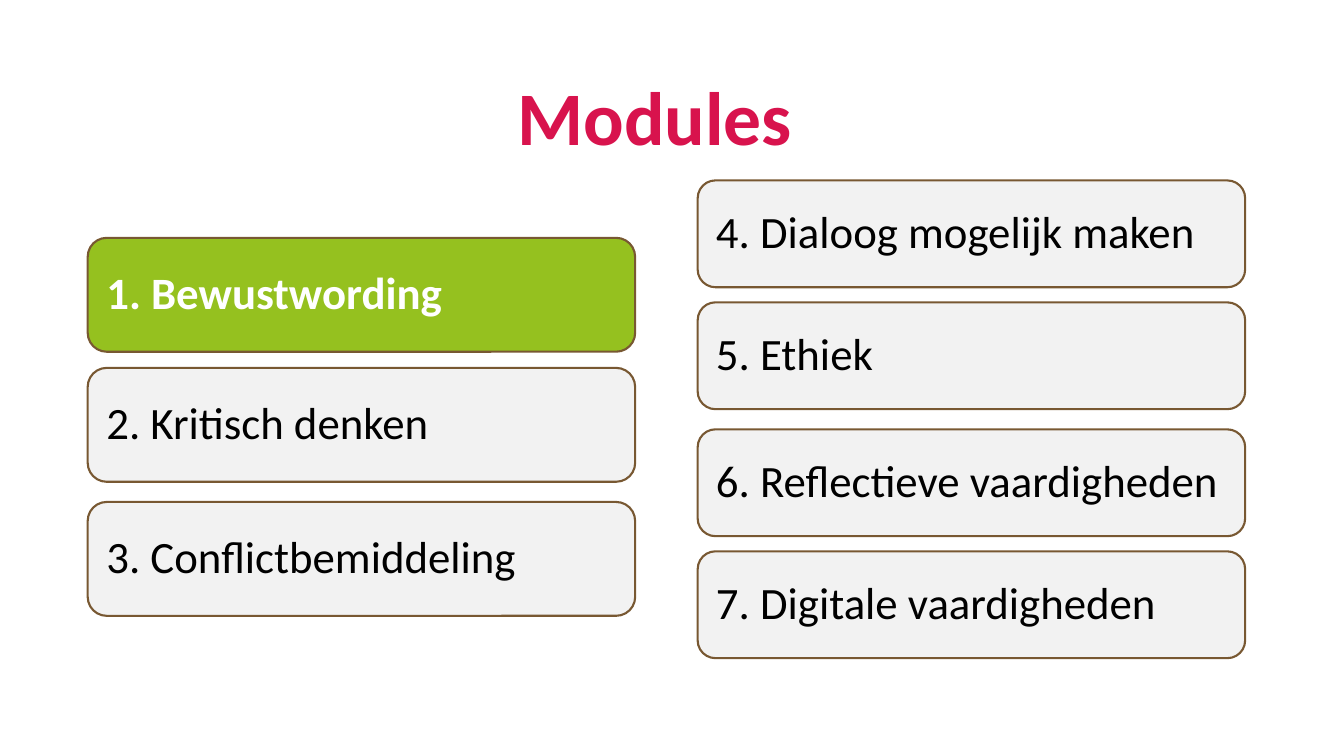
from pptx import Presentation
from pptx.dml.color import RGBColor
from pptx.enum.shapes import MSO_SHAPE
from pptx.enum.text import MSO_ANCHOR, PP_ALIGN
from pptx.util import Inches, Pt

RED = RGBColor(0xD8, 0x13, 0x4D)
GREEN = RGBColor(0x95, 0xC1, 0x1F)
GRAY = RGBColor(0xF2, 0xF2, 0xF2)
BROWN = RGBColor(0x78, 0x58, 0x32)
WHITE = RGBColor(0xFF, 0xFF, 0xFF)
BLACK = RGBColor(0, 0, 0)


def write(shape, text, size=32, color=BLACK, bold=False,
          align=PP_ALIGN.LEFT, anchor=MSO_ANCHOR.MIDDLE):
    frame = shape.text_frame
    frame.word_wrap = True
    frame.vertical_anchor = anchor
    par = frame.paragraphs[0]
    par.text = text
    par.alignment = align
    par.line_spacing = 0.9
    font = par.font
    font.name = "Calibri"
    font.size = Pt(size)
    font.bold = bold
    font.color.rgb = color


deck = Presentation()
deck.slide_width = Inches(13.33)
deck.slide_height = Inches(7.5)
slide = deck.slides.add_slide(deck.slide_layouts[6])

title = slide.shapes.add_textbox(Inches(0.01), Inches(-0.3), Inches(12.97), Inches(1.95))
write(title, "Modules", size=54, color=RED, bold=True,
      align=PP_ALIGN.CENTER, anchor=MSO_ANCHOR.BOTTOM)

# Each column: left, card height, cards as (top, label)
columns = [
    (0.87, 1.13, [(2.36, "1. Bewustwording"),
                  (3.65, "2. Kritisch denken"),
                  (4.98, "3. Conflictbemiddeling")]),
    (6.92, 1.06, [(1.79, "4. Dialoog mogelijk maken"),
                  (3.0, "5. Ethiek"),
                  (4.26, "6. Reflectieve vaardigheden"),
                  (5.47, "7. Digitale vaardigheden")]),
]
current = "1. Bewustwording"

for left, height, cards in columns:
    for top, label in cards:
        card = slide.shapes.add_shape(MSO_SHAPE.ROUNDED_RECTANGLE, Inches(left),
                                      Inches(top), Inches(5.43), Inches(height))
        active = label == current
        card.shadow.inherit = False
        card.fill.solid()
        card.fill.fore_color.rgb = GREEN if active else GRAY
        card.line.color.rgb = BROWN
        card.line.width = Pt(1.5)
        frame = card.text_frame
        frame.margin_left = frame.margin_right = Inches(0.13)
        frame.margin_top = frame.margin_bottom = Inches(0.13)
        write(card, label, color=WHITE if active else BLACK, bold=active)

deck.save("out.pptx")
